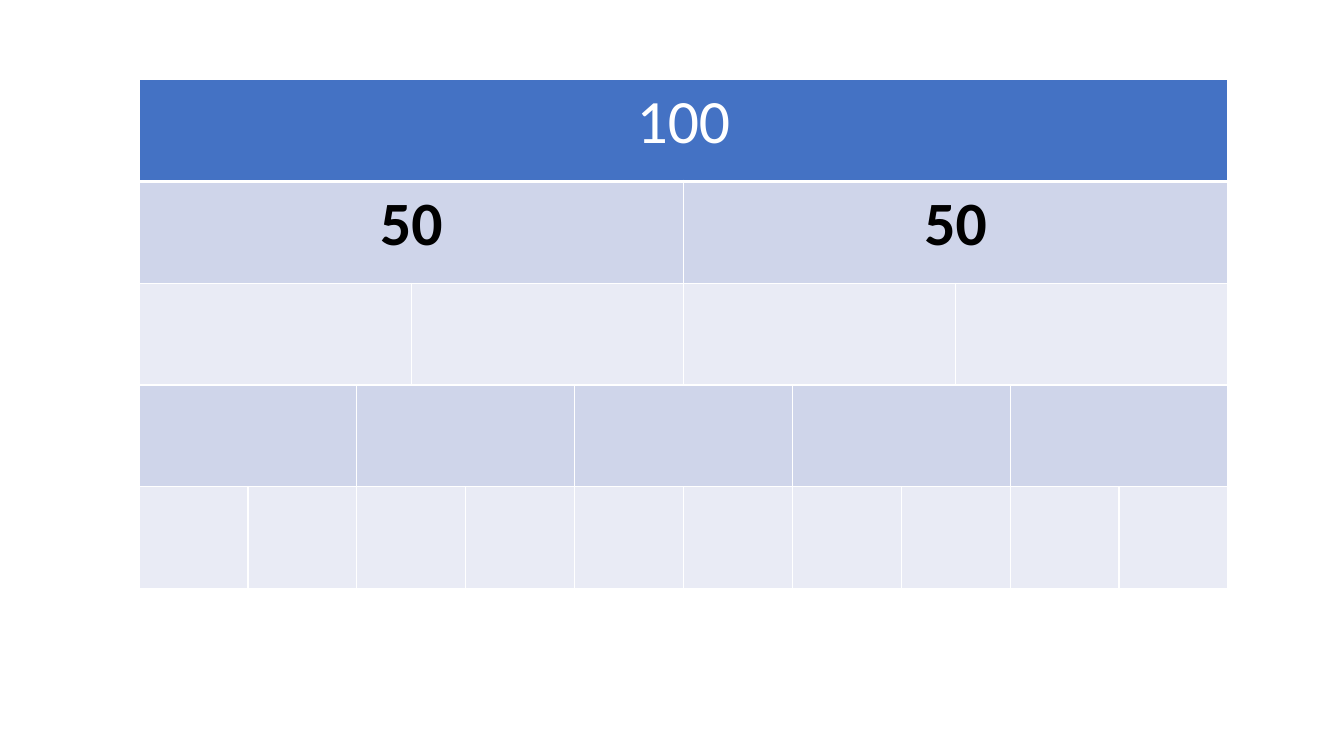
from lxml import etree
from pptx import Presentation
from pptx.dml.color import RGBColor
from pptx.enum.text import PP_ALIGN
from pptx.oxml.ns import qn
from pptx.util import Inches, Pt

CENTER = PP_ALIGN.CENTER
BLANK_LAYOUT = 6
BLUE, DARK_BAND, LIGHT_BAND = "4472C4", "CFD5EA", "E9EBF5"
WHITE, BLACK = "FFFFFF", "000000"

# Each row splits the whole bar into equal parts: count, fill, label
ROWS = [
    (1, BLUE, "100"),
    (2, DARK_BAND, "50"),
    (4, LIGHT_BAND, ""),
    (5, DARK_BAND, ""),
    (10, LIGHT_BAND, ""),
]
UNITS = 20  # smallest number that every part count divides
UNIT_WIDTH = 0.54
ROW_HEIGHT = 1.01


def color(hex_string):
    return RGBColor.from_string(hex_string)


def set_borders(cell, hex_string, points, bottom_points):
    properties = cell._tc.get_or_add_tcPr()
    for side in ("L", "R", "T", "B"):
        width = bottom_points if side == "B" else points
        line = etree.SubElement(properties, qn(f"a:ln{side}"), w=str(Pt(width)))
        fill = etree.SubElement(line, qn("a:solidFill"))
        etree.SubElement(fill, qn("a:srgbClr"), val=hex_string)


def style_cell(cell, fill, is_header):
    set_borders(cell, WHITE, 1, 3 if is_header else 1)
    cell.fill.solid()
    cell.fill.fore_color.rgb = color(fill)


def write_label(cell, label, is_header):
    para = cell.text_frame.paragraphs[0]
    para.text = label
    para.alignment = CENTER
    font = para.runs[0].font
    font.name = "Calibri"
    font.size = Pt(44)
    font.bold = not is_header
    font.color.rgb = color(WHITE if is_header else BLACK)


def add_bar_table(page):
    # Column edges fall wherever any row has a division
    edges = sorted({part * UNITS // count
                    for count, _, _ in ROWS for part in range(count + 1)})
    frame = page.shapes.add_table(
        len(ROWS), len(edges) - 1, Inches(1.38), Inches(0.79),
        Inches(UNITS * UNIT_WIDTH), Inches(len(ROWS) * ROW_HEIGHT))
    table = frame.table
    for column, left, right in zip(table.columns, edges, edges[1:]):
        column.width = Inches((right - left) * UNIT_WIDTH)

    for index, (count, fill, label) in enumerate(ROWS):
        is_header = index == 0
        table.rows[index].height = Inches(ROW_HEIGHT)
        for cell in table.rows[index].cells:
            style_cell(cell, fill, is_header)

        # Merge the columns that make up each equal part
        step = UNITS // count
        for start in range(0, UNITS, step):
            first = edges.index(start)
            last = edges.index(start + step) - 1
            cell = table.cell(index, first)
            if last > first:
                cell.merge(table.cell(index, last))
            if label:
                write_label(cell, label, is_header)


def main():
    deck = Presentation()
    deck.slide_width = Inches(13.33)
    deck.slide_height = Inches(7.5)
    page = deck.slides.add_slide(deck.slide_layouts[BLANK_LAYOUT])
    add_bar_table(page)
    deck.save("out.pptx")


if __name__ == "__main__":
    main()
